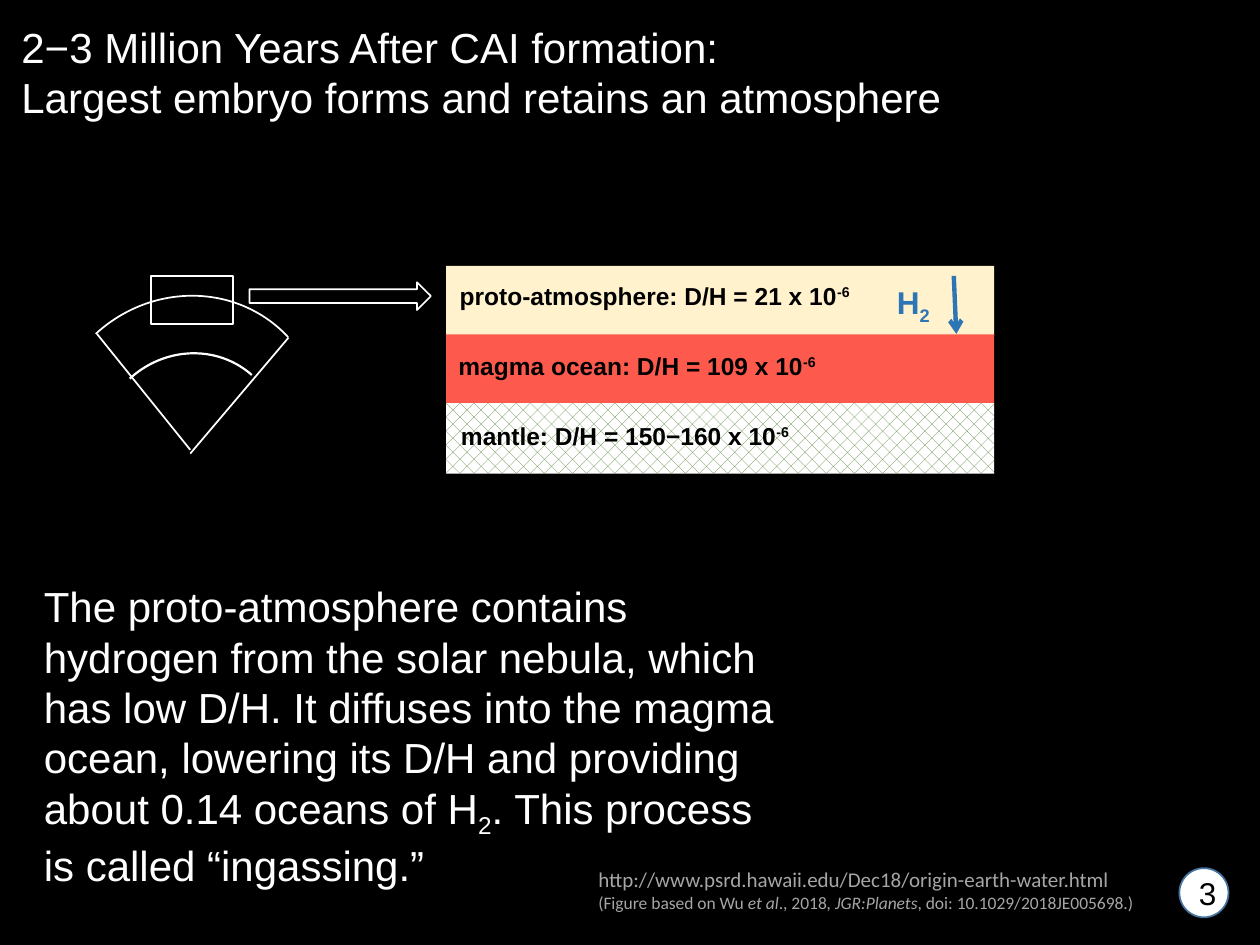
import pptx
import pptx.util
import pptx.dml.color
import pptx.enum.dml
import pptx.enum.shapes
import pptx.enum.text
import pptx.oxml
import pptx.oxml.ns

Inches = pptx.util.Inches
Pt = pptx.util.Pt
RGB = pptx.dml.color.RGBColor
KIND = pptx.enum.shapes.MSO_SHAPE
ANCHOR = pptx.enum.text.MSO_ANCHOR
ALIGN = pptx.enum.text.PP_ALIGN
FIT = pptx.enum.text.MSO_AUTO_SIZE

BLACK = RGB(0x00, 0x00, 0x00)
WHITE = RGB(0xFF, 0xFF, 0xFF)
CREAM = RGB(0xFF, 0xF2, 0xCC)
RED = RGB(0xFD, 0x5A, 0x4D)
GREEN = RGB(0x54, 0x82, 0x35)
BLUE = RGB(0x2E, 0x75, 0xB6)
STEEL = RGB(0x43, 0x73, 0x9E)
GRAY = RGB(0xA6, 0xA6, 0xA6)

SUP, SUB = {"base": 30}, {"base": -25}
ITALIC = {"italic": True}

TITLE = [
    [("2−3 Million Years After CAI formation:", {})],
    [("Largest embryo forms and retains an atmosphere", {})],
]
BODY = [[
    ("The proto-atmosphere contains hydrogen from the solar nebula, which "
     "has low D/H. It diffuses into the magma ocean, lowering its D/H and "
     "providing about 0.14 oceans of H", {}),
    ("2", SUB),
    (". This process is called “ingassing.”", {}),
]]
SMALL = {"size": 10}
SOURCE = [
    [("http://www.psrd.hawaii.edu/Dec18/origin-earth-water.html", {})],
    [("(Figure based on Wu ", SMALL), ("et al", SMALL | ITALIC),
     ("., 2018", SMALL), (", JGR:Planets", SMALL | ITALIC),
     (", doi: 10.1029/2018JE005698.)", SMALL)],
]
LAYERS = [
    ("proto-atmosphere: D/H = 21 x 10", CREAM, 3.55, 3.33),
    ("magma ocean: D/H = 109 x 10", RED, 3.54, 3.07),
    ("mantle: D/H = 150−160 x 10", None, 3.56, 2.82),
]
ARCS = [
    ((0.37, 2.37, 2.21, 2.11), 1, (162, 0)),
    ((0.77, 2.82, 1.47, 1.4), 1.25, (162, 212.96)),
]
SIDES = [((0.77, 2.65), (1.51, 3.57)), ((2.29, 2.68), (1.51, 3.6))]


def write(frame, paras, size, color, face="Arial", bold=False):
    for i, runs in enumerate(paras):
        para = frame.paragraphs[0] if i == 0 else frame.add_paragraph()
        for text, style in runs:
            run = para.add_run()
            run.text = text
            font = run.font
            font.name, font.bold = face, bold
            font.size = Pt(style.get("size", size))
            font.italic = style.get("italic", False)
            font.color.rgb = color
            if "base" in style:
                props = run._r.get_or_add_rPr()
                props.set("baseline", str(style["base"] * 1000))


def label(box, paras, size, color, wrap=True, **style):
    frame = slide.shapes.add_textbox(*map(Inches, box)).text_frame
    frame.word_wrap = wrap
    frame.auto_size = FIT.SHAPE_TO_FIT_TEXT
    write(frame, paras, size, color, **style)


def shape(home, kind, box, fill=None, line=None, width=1):
    item = home.add_shape(kind, *map(Inches, box))
    item.shadow.inherit = False
    if fill is None:
        item.fill.background()
    else:
        item.fill.solid()
        item.fill.fore_color.rgb = fill
    if line is None:
        item.line.fill.background()
    else:
        item.line.color.rgb = line
        item.line.width = Pt(width)
    return item


def stroke(home, start, end, color, width):
    item = home.add_connector(pptx.enum.shapes.MSO_CONNECTOR.STRAIGHT,
                              *map(Inches, start + end))
    item.line.color.rgb = color
    item.line.width = Pt(width)
    item._element.spPr.append(pptx.oxml.parse_xml(
        "<a:effectLst %s/>" % pptx.oxml.ns.nsdecls("a")))
    return item


deck = pptx.Presentation()
deck.slide_width, deck.slide_height = Inches(10), Inches(7.5)
slide = deck.slides.add_slide(deck.slide_layouts[5])
slide.background.fill.solid()
slide.background.fill.fore_color.rgb = BLACK

title = slide.shapes.title
title.left, title.top, title.width, title.height = map(
    Inches, (0.07, 0.12, 7.82, 0.91))
frame = title.text_frame
frame.word_wrap = True
frame.auto_size = FIT.NONE
frame.vertical_anchor = ANCHOR.TOP
write(frame, TITLE, 24, WHITE)
for para in frame.paragraphs:
    para.alignment = ALIGN.LEFT

wedge = slide.shapes.add_group_shape().shapes
for box, width, ends in ARCS:
    arc = shape(wedge, KIND.ARC, box, line=WHITE, width=width)
    arc.rotation = 317.3
    arc.adjustments[0], arc.adjustments[1] = ends
for start, end in SIDES:
    stroke(wedge, start, end, WHITE, 1)
shape(wedge, KIND.RECTANGLE, (1.2, 2.19, 0.65, 0.38), line=WHITE)

bands = slide.shapes.add_group_shape().shapes
for i, (text, fill, left, width) in enumerate(LAYERS):
    band = shape(bands, KIND.RECTANGLE,
                 (3.54, 2.11 + 0.545 * i, 4.35, 0.56), fill)
    if fill is None:
        band.fill.patterned()
        band.fill.pattern = pptx.enum.dml.MSO_PATTERN.PERCENT_25
        band.fill.fore_color.rgb = GREEN
        band.fill.back_color.rgb = WHITE
    label((left, 2.18 + 0.555 * i, width, 0.34),
          [[(text, {}), ("-6", SUP)]], 14, BLACK, wrap=False, bold=True)

label((7.02, 2.2, 0.48, 0.4), [[("H", {}), ("2", SUB)]], 18, BLUE,
      wrap=False, bold=True)
flow = stroke(slide.shapes, (7.57, 2.19), (7.59, 2.65), BLUE, 2.5)
flow.line._get_or_add_ln().append(pptx.oxml.parse_xml(
    '<a:tailEnd type="arrow" %s/>' % pptx.oxml.ns.nsdecls("a")))
shape(slide.shapes, KIND.RIGHT_ARROW, (1.98, 2.24, 1.44, 0.22), line=WHITE)

label((0.25, 4.56, 6.04, 2.52), BODY, 24, WHITE)
badge = shape(slide.shapes, KIND.OVAL, (9.36, 6.89, 0.39, 0.39), WHITE, STEEL)
frame = badge.text_frame
frame.vertical_anchor = ANCHOR.MIDDLE
write(frame, [[("3", {})]], 18, BLACK)
frame.paragraphs[0].alignment = ALIGN.CENTER
label((4.65, 6.83, 4.6, 0.47), SOURCE, 12, GRAY, face="Calibri")

deck.save("out.pptx")
